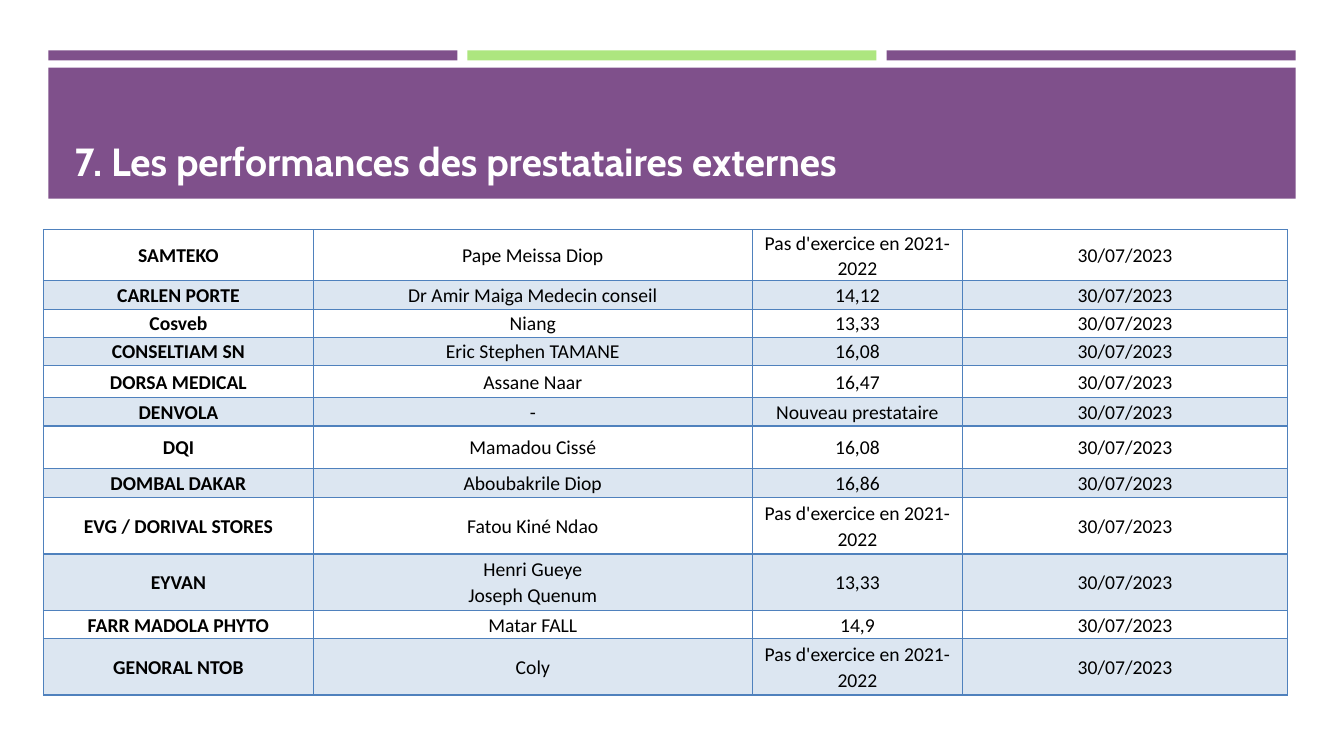
from dataclasses import dataclass

from pptx import Presentation
from pptx.dml.color import RGBColor
from pptx.enum.shapes import MSO_SHAPE
from pptx.enum.text import MSO_ANCHOR, MSO_AUTO_SIZE, PP_ALIGN
from pptx.oxml import parse_xml
from pptx.oxml.ns import nsdecls
from pptx.util import Inches, Pt


@dataclass(frozen=True)
class Theme:
    purple: str = "7F508B"
    green: str = "ADE67F"
    white: str = "FFFFFF"
    black: str = "000000"
    stripe: str = "DCE6F1"
    border: str = "4F81BD"
    title_font: str = "Cabin"
    table_font: str = "Calibri"
    title_size: int = 28
    table_size: int = 14


THEME = Theme()
TITLE = "7. Les performances des prestataires externes"
NO_SCORE = "Pas d'exercice en 2021-2022"
REVIEW_DATE = "30/07/2023"
COLUMN_WIDTHS = (2.68, 4.35, 2.09, 3.22)

# Provider, contact, score, row height
PROVIDERS = (
    ("SAMTEKO", "Pape Meissa Diop", NO_SCORE, 0.44),
    ("CARLEN PORTE", "Dr Amir Maiga Medecin conseil", "14,12", 0.28),
    ("Cosveb", "Niang", "13,33", 0.28),
    ("CONSELTIAM SN", "Eric Stephen TAMANE", "16,08", 0.28),
    ("DORSA MEDICAL", "Assane Naar", "16,47", 0.32),
    ("DENVOLA", "-", "Nouveau prestataire", 0.28),
    ("DQI", "Mamadou Cissé", "16,08", 0.42),
    ("DOMBAL DAKAR", "Aboubakrile Diop", "16,86", 0.29),
    ("EVG / DORIVAL STORES", "Fatou Kiné Ndao", NO_SCORE, 0.56),
    ("EYVAN", "Henri Gueye\nJoseph Quenum", "13,33", 0.56),
    ("FARR MADOLA PHYTO", "Matar FALL", "14,9", 0.28),
    ("GENORAL NTOB", "Coly", NO_SCORE, 0.56),
)


def set_font(font, name, size, color, bold):
    font.name = name
    font.size = Pt(size)
    font.bold = bold
    font.color.rgb = RGBColor.from_string(color)


def add_band(slide, left, top, width, height, color):
    band = slide.shapes.add_shape(
        MSO_SHAPE.RECTANGLE, Inches(left), Inches(top), Inches(width), Inches(height))
    band.shadow.inherit = False
    band.fill.solid()
    band.fill.fore_color.rgb = RGBColor.from_string(color)
    band.line.fill.background()


def add_header(slide, left, top, width, height):
    # Three accent strips
    gap, strip_height = 0.1, 0.1
    strip_width = (width - 2 * gap) / 3
    for index, color in enumerate((THEME.purple, THEME.green, THEME.purple)):
        add_band(slide, left + index * (strip_width + gap), top,
                 strip_width, strip_height, color)

    # Title banner
    banner_top = top + 0.17
    banner_height = height - 0.17
    add_band(slide, left, banner_top, width, banner_height, THEME.purple)

    # Title, brought in front of the banner
    title = slide.shapes.title
    title.element.getparent().append(title.element)
    title.left, title.top = Inches(left + 0.16), Inches(banner_top + 0.1)
    title.width, title.height = Inches(width - 0.3), Inches(banner_height - 0.19)
    title.text = TITLE
    frame = title.text_frame
    frame.auto_size = MSO_AUTO_SIZE.NONE
    frame.vertical_anchor = MSO_ANCHOR.BOTTOM
    heading = frame.paragraphs[0]
    heading.alignment = PP_ALIGN.LEFT
    set_font(heading.font, THEME.title_font, THEME.title_size, THEME.white, True)


def add_borders(cell):
    properties = cell._tc.get_or_add_tcPr()
    for position, side in enumerate(("lnL", "lnR", "lnT", "lnB")):
        properties.insert(position, parse_xml(
            f'<a:{side} {nsdecls("a")} w="{Pt(1)}"><a:solidFill>'
            f'<a:srgbClr val="{THEME.border}"/></a:solidFill></a:{side}>'))


def fill_cell(cell, text, bold, striped):
    cell.vertical_anchor = MSO_ANCHOR.MIDDLE
    cell.margin_left = cell.margin_right = Inches(0.03)
    cell.margin_top = cell.margin_bottom = 0
    if striped:
        cell.fill.solid()
        cell.fill.fore_color.rgb = RGBColor.from_string(THEME.stripe)
    else:
        cell.fill.background()
    add_borders(cell)
    entry = cell.text_frame.paragraphs[0]
    entry.text = text
    entry.alignment = PP_ALIGN.CENTER
    entry.line_spacing = 1.07
    set_font(entry.font, THEME.table_font, THEME.table_size, THEME.black, bold)


def add_provider_table(slide, left, top, width, height):
    scores = slide.shapes.add_table(
        len(PROVIDERS), len(COLUMN_WIDTHS),
        Inches(left), Inches(top), Inches(width), Inches(height)).table
    scores.first_row = scores.horz_banding = False
    for column, column_width in zip(scores.columns, COLUMN_WIDTHS):
        column.width = Inches(column_width)
    for row_index, (provider, contact, score, row_height) in enumerate(PROVIDERS):
        scores.rows[row_index].height = Inches(row_height)
        for column_index, text in enumerate((provider, contact, score, REVIEW_DATE)):
            fill_cell(scores.cell(row_index, column_index), text,
                      bold=column_index == 0, striped=row_index % 2 == 1)


def main():
    deck = Presentation()
    deck.slide_width, deck.slide_height = Inches(13.33), Inches(7.5)
    slide = deck.slides.add_slide(deck.slide_layouts[5])
    add_header(slide, 0.48, 0.5, 12.37, 1.47)
    add_provider_table(slide, 0.43, 2.28, 12.34, 4.55)
    deck.save("out.pptx")


if __name__ == "__main__":
    main()
